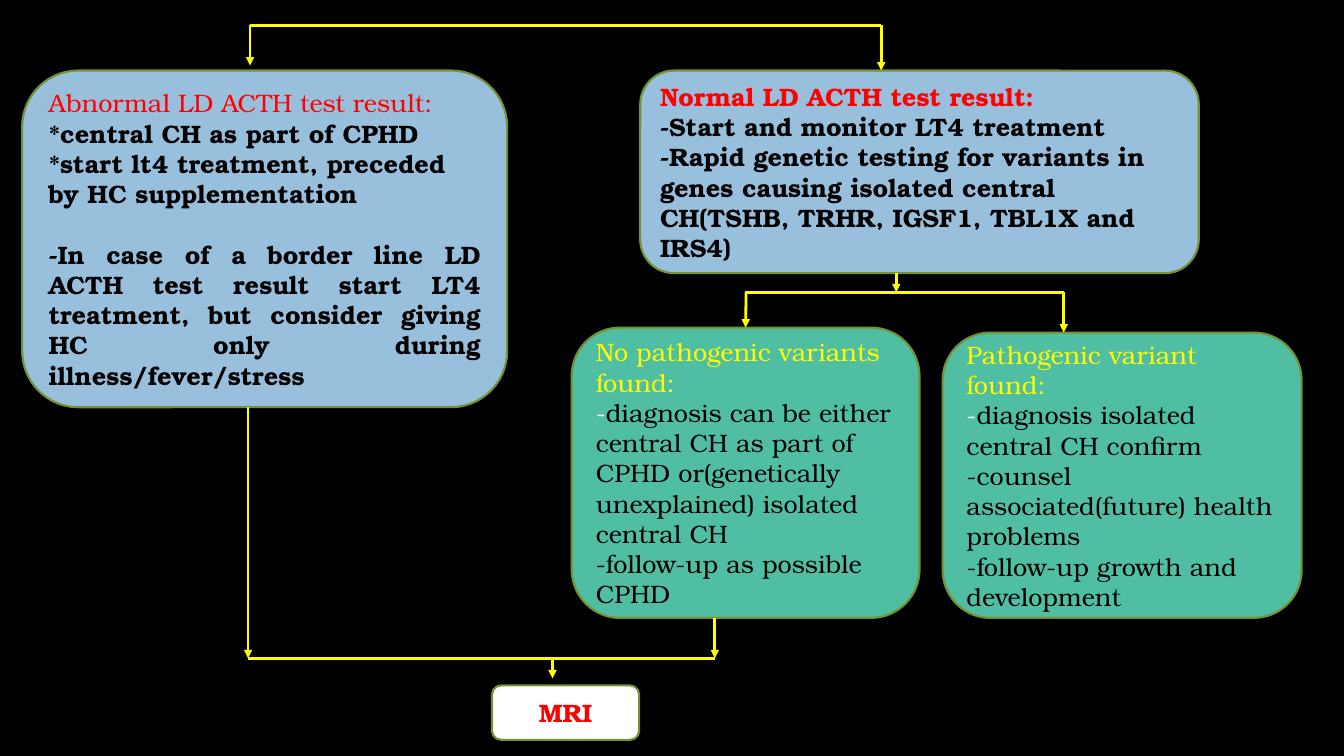
from pptx import Presentation
from pptx.dml.color import RGBColor
from pptx.enum.shapes import MSO_CONNECTOR, MSO_SHAPE
from pptx.enum.text import MSO_ANCHOR, PP_ALIGN
from pptx.oxml.ns import qn
from pptx.util import Inches, Pt
from lxml import etree

BLACK = RGBColor(0x00, 0x00, 0x00)
WHITE = RGBColor(0xFF, 0xFF, 0xFF)
RED = RGBColor(0xFF, 0x00, 0x00)
YELLOW = RGBColor(0xFF, 0xFF, 0x00)
BLUE = RGBColor(0x98, 0xC0, 0xDD)
GREEN = RGBColor(0x50, 0xBE, 0xA3)
OLIVE = RGBColor(0x75, 0x92, 0x32)
FONT = "TeX Gyre Bonum"


def add_text(paragraph, text, color=BLACK, bold=False):
    """Append a formatted run to a paragraph."""
    run = paragraph.add_run()
    run.text = text
    run.font.name = FONT
    run.font.size = Pt(18)
    run.font.bold = bold
    run.font.color.rgb = color


def add_box(slide, left, top, width, height, fill, lines, align=PP_ALIGN.LEFT):
    """Add a rounded box; each line is a list of (text, color, bold) runs."""
    box = slide.shapes.add_shape(MSO_SHAPE.ROUNDED_RECTANGLE, Inches(left),
                                 Inches(top), Inches(width), Inches(height))
    box.shadow.inherit = False
    box.fill.solid()
    box.fill.fore_color.rgb = fill
    box.line.color.rgb = OLIVE
    box.line.width = Pt(1.5)
    frame = box.text_frame
    frame.word_wrap = True
    frame.vertical_anchor = MSO_ANCHOR.MIDDLE
    for index, runs in enumerate(lines):
        paragraph = frame.add_paragraph() if index else frame.paragraphs[0]
        paragraph.alignment = align
        for run in runs:
            add_text(paragraph, *run)
    return box


def add_line(slide, x1, y1, x2, y2, arrow=True):
    """Add a yellow flow line, with an arrowhead at its end by default."""
    flow = slide.shapes.add_connector(MSO_CONNECTOR.STRAIGHT, Inches(x1),
                                      Inches(y1), Inches(x2), Inches(y2))
    flow.line.color.rgb = YELLOW
    flow.line.width = Pt(2)
    if arrow:
        outline = flow.line._get_or_add_ln()
        etree.SubElement(outline, qn("a:tailEnd"), type="triangle")
    etree.SubElement(flow._element.spPr, qn("a:effectLst"))
    return flow


def add_variant_box(slide, left, top, width, height, heading, first, *others):
    """Add a green box for one outcome of the genetic testing."""
    lines = [[(heading, YELLOW)], [("-", WHITE), (first,)]]
    lines += [[(other,)] for other in others]
    return add_box(slide, left, top, width, height, GREEN, lines)


def main():
    """Build the flow chart slide."""
    deck = Presentation()
    deck.slide_width, deck.slide_height = Inches(13.33), Inches(7.5)
    slide = deck.slides.add_slide(deck.slide_layouts[6])
    slide.background.fill.solid()
    slide.background.fill.fore_color.rgb = BLACK

    abnormal = add_box(slide, 0.22, 0.7, 4.81, 3.34, BLUE, [
        [("Abnormal LD ACTH test result:", RED)],
        [("*central CH as part of CPHD", BLACK, True)],
        [("*start lt4 treatment, preceded by HC supplementation", BLACK, True)],
        [("-In case of a border line LD ACTH test result start LT4 treatment, "
          "but consider giving HC only during illness/fever/stress", BLACK, True)],
    ])
    borderline = abnormal.text_frame.paragraphs[-1]
    borderline.alignment = PP_ALIGN.JUSTIFY
    borderline.space_before = Pt(21.6)

    add_box(slide, 6.35, 0.7, 5.54, 2.01, BLUE, [
        [("Normal LD ACTH test result:", RED, True)],
        [("-Start and monitor LT4 treatment", BLACK, True)],
        [("-Rapid genetic testing for variants in genes causing isolated "
          "central CH(TSHB, TRHR, IGSF1, TBL1X and IRS4)", BLACK, True)],
    ])
    add_variant_box(slide, 9.35, 3.3, 3.56, 2.83, "Pathogenic variant found:",
                    "diagnosis isolated central CH confirm",
                    "-counsel associated(future) health problems",
                    "-follow-up growth and development")
    no_variants = add_variant_box(
        slide, 5.67, 3.25, 3.45, 2.88, "No pathogenic variants found:",
        "diagnosis can be either central CH as part of CPHD "
        "or(genetically unexplained) isolated central CH",
        "-follow-up as possible CPHD")
    add_box(slide, 4.88, 6.8, 1.46, 0.54, WHITE, [[("MRI", RED, True)]],
            align=PP_ALIGN.CENTER)

    for x1, x2, y in ((2.48, 8.74, 0.25), (7.39, 10.55, 2.9), (2.46, 7.09, 6.53)):
        add_line(slide, x1, y, x2, y, arrow=False)
    for x, start, end in ((2.48, 0.25, 0.65), (8.74, 0.25, 0.7),
                          (8.89, 2.71, 2.9), (10.55, 2.9, 3.3),
                          (2.46, 4.04, 6.53), (7.09, 6.13, 6.53),
                          (5.48, 6.53, 6.73)):
        add_line(slide, x, start, x, end)
    add_line(slide, 7.4, 2.9, 7.4, 3.25).end_connect(no_variants, 0)

    deck.save("out.pptx")


if __name__ == "__main__":
    main()
